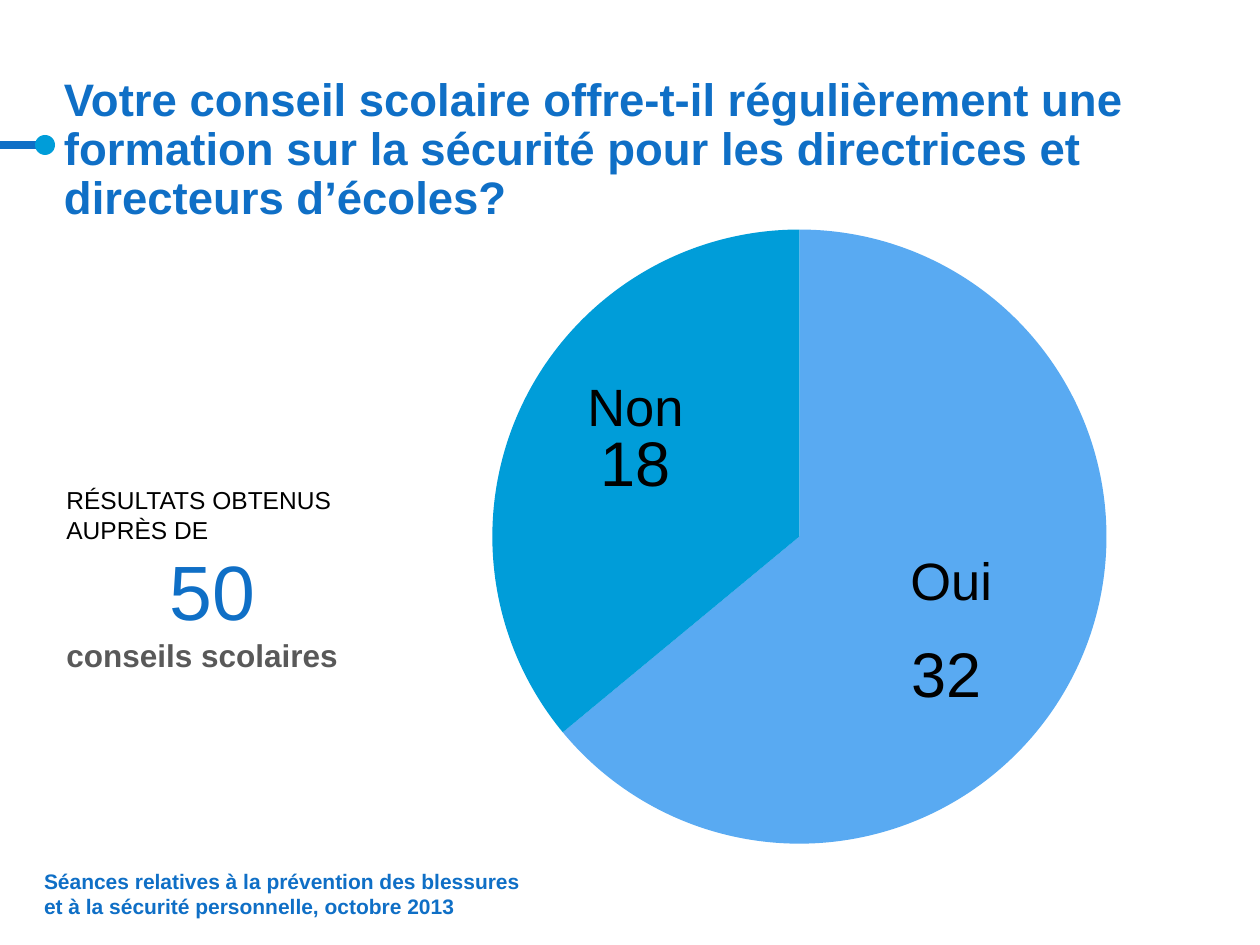
from lxml import etree
from pptx import Presentation, util as u
from pptx.chart.data import CategoryChartData
from pptx.dml.color import RGBColor
from pptx.enum import chart as charts, shapes, text
from pptx.oxml import parse_xml
from pptx.oxml.ns import nsdecls, qn

EMU_PER_PX = 914400 / 126
COLOURS = {
    "blue": "0F6FC6",
    "cyan": "009DD9",
    "sky": "59AAF2",
    "black": "000000",
    "grey": "595959",
}


def px(*lengths):
    return [u.Emu(round(length * EMU_PER_PX)) for length in lengths]


def colour(name):
    return RGBColor.from_string(COLOURS[name])


def write(paragraph, words, size=30, color="black", bold=False, align=None, spacing=None):
    paragraph.alignment = align
    if spacing:
        paragraph.line_spacing = u.Pt(spacing)
    run = paragraph.add_run()
    run.text = words
    font = run.font
    font.name, font.size, font.bold = "Arial", u.Pt(size), bold
    font.color.rgb = colour(color)


def manual_layout(x, y, extra=""):
    return parse_xml(
        f'<c:layout {nsdecls("c")}><c:manualLayout>{extra}'
        f'<c:x val="{x}"/><c:y val="{y}"/></c:manualLayout></c:layout>')


class SlideBuilder:
    def __init__(self, slide):
        self.slide = slide

    def title(self, box, words, **style):
        shape = self.slide.shapes.title
        shape.left, shape.top, shape.width, shape.height = px(*box)
        frame = shape.text_frame
        frame.word_wrap = True
        frame.auto_size = text.MSO_AUTO_SIZE.NONE
        frame.vertical_anchor = text.MSO_ANCHOR.BOTTOM
        frame.margin_left = frame.margin_right = frame.margin_bottom = 0
        write(frame.paragraphs[0], words, align=text.PP_ALIGN.LEFT, **style)

    def text(self, box, *lines, footer=False):
        frame = self.slide.shapes.add_textbox(*px(*box)).text_frame
        frame.word_wrap = True
        if footer:
            frame.vertical_anchor = text.MSO_ANCHOR.BOTTOM
            frame.margin_left = frame.margin_right = 0
            frame.margin_top = frame.margin_bottom = 0
        for index, (words, style) in enumerate(lines):
            paragraph = frame.add_paragraph() if index else frame.paragraphs[0]
            write(paragraph, words, **style)

    def line(self, start, end, color, width):
        line = self.slide.shapes.add_connector(
            shapes.MSO_CONNECTOR.STRAIGHT, *px(*start, *end))
        line.line.color.rgb = colour(color)
        line.line.width = u.Pt(width)
        etree.SubElement(line._element.spPr, qn("a:effectLst"))

    def dot(self, box, color):
        shape = self.slide.shapes.add_shape(shapes.MSO_SHAPE.OVAL, *px(*box))
        shape.shadow.inherit = False
        shape.fill.solid()
        shape.fill.fore_color.rgb = colour(color)
        shape.line.fill.background()

    def pie(self, box, points):
        """Each point is (category, value, colour, label offset)."""
        data = CategoryChartData()
        data.categories = [point[0] for point in points]
        data.add_series("Series 1", [point[1] for point in points])
        chart = self.slide.shapes.add_chart(
            charts.XL_CHART_TYPE.PIE, *px(*box), data).chart
        chart.has_legend = chart.has_title = False
        chart.font.name, chart.font.size = "Vollkorn", u.Pt(18)
        chart.font.color.rgb = colour("black")
        plot = chart.plots[0]
        plot.vary_by_categories = False
        series = plot.series[0]
        for index, (_, _, color, offset) in enumerate(points):
            point = series.points[index]
            point.format.fill.solid()
            point.format.fill.fore_color.rgb = colour(color)
            label = point.data_label
            label.position = charts.XL_LABEL_POSITION.CENTER
            label.font.name, label.font.size = "Arial", u.Pt(36)
            label.font.color.rgb = colour("black")
            # Shift the label away from the middle of its slice
            element = series._element.xpath("c:dLbls/c:dLbl")[index]
            element.find(qn("c:idx")).addnext(manual_layout(*offset))
        # Fix the plot area inside the chart frame
        area = chart._chartSpace.xpath("c:chart/c:plotArea")[0]
        for old in area.findall(qn("c:layout")):
            area.remove(old)
        layout = manual_layout(0.145, 0.014, '<c:layoutTarget val="inner"/>'
                               '<c:xMode val="edge"/><c:yMode val="edge"/>')
        for tag, value in (("c:w", "0.74"), ("c:h", "0.986")):
            etree.SubElement(layout[0], qn(tag)).set("val", value)
        area.insert(0, layout)


def main():
    presentation = Presentation()
    presentation.slide_width, presentation.slide_height = px(1260, 945)
    builder = SlideBuilder(
        presentation.slides.add_slide(presentation.slide_layouts[5]))

    # Title with its marker line
    builder.line((0, 145), (44, 145), "blue", 4.75)
    builder.title(
        (64, 55, 1160, 169),
        "Votre conseil scolaire offre-t-il régulièrement une formation sur la "
        "sécurité pour les directrices et directeurs d’écoles?",
        size=26, color="blue", bold=True, spacing=28)

    # Pie and slice names
    builder.pie((372, 195, 830, 674), [
        ("1", 32, "sky", (0.01, 0.11)),
        ("2", 18, "cyan", (-0.03, -0.01)),
    ])
    builder.text((898, 542, 118, 77), ("Oui", {}))
    builder.text((575, 368, 129, 77), ("Non", {}))

    # Sample size
    builder.text(
        (54, 479, 338, 204),
        ("RÉSULTATS OBTENUS AUPRÈS DE", {"size": 14}),
        ("50 ", {"size": 44, "color": "blue", "align": text.PP_ALIGN.CENTER}),
        ("conseils scolaires", {"size": 18, "color": "grey", "bold": True}))

    # Footer and marker dot
    builder.text(
        (44, 886, 498, 33),
        ("Séances relatives à la prévention des blessures et à la sécurité "
         "personnelle, octobre 2013", {"size": 12, "color": "blue", "bold": True}),
        footer=True)
    builder.dot((35, 135, 20, 20), "cyan")

    presentation.save("out.pptx")


if __name__ == "__main__":
    main()
